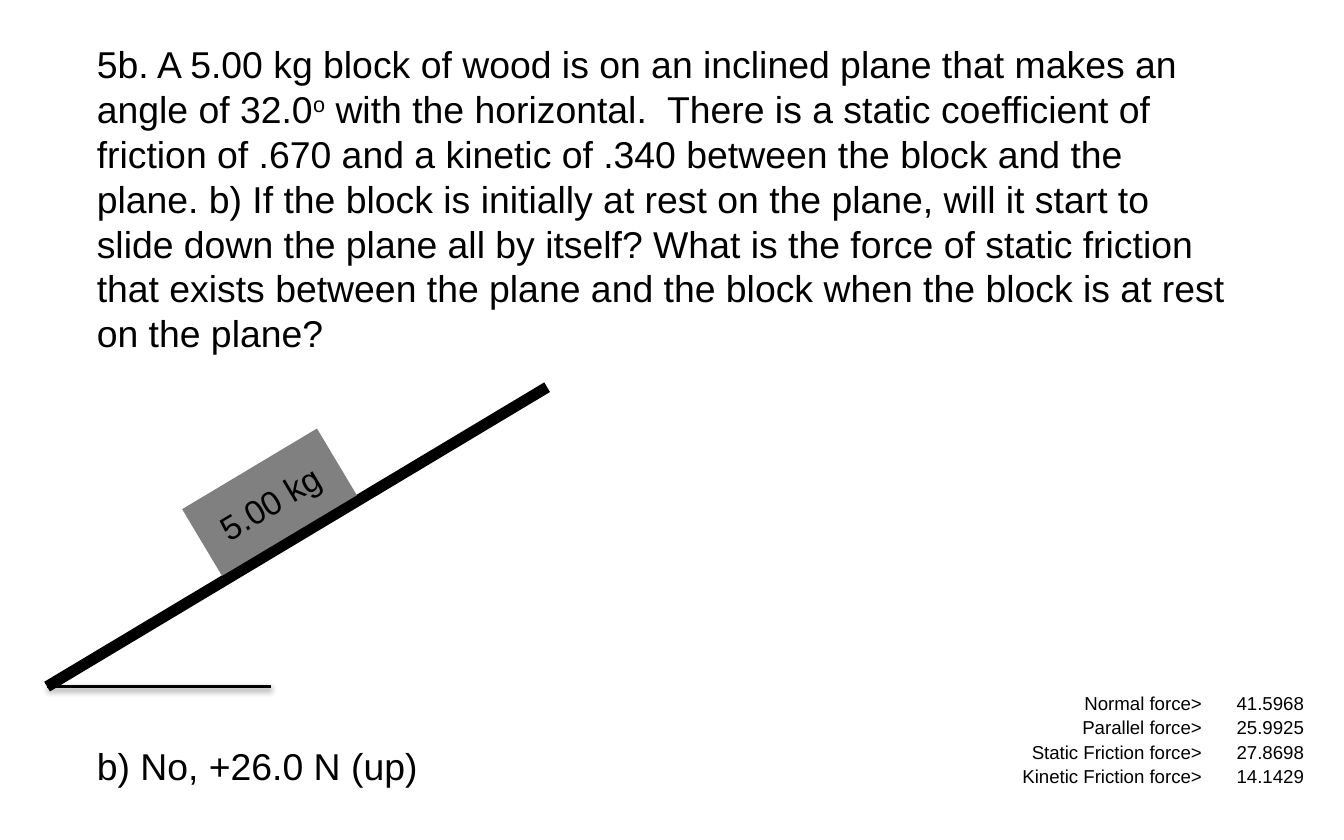
from dataclasses import dataclass

from lxml import etree
from pptx import Presentation
from pptx.dml.color import RGBColor
from pptx.enum.shapes import MSO_CONNECTOR, MSO_SHAPE
from pptx.enum.text import MSO_ANCHOR as Anchor, MSO_AUTO_SIZE as AutoSize, PP_ALIGN as Align
from pptx.oxml import parse_xml
from pptx.oxml.ns import nsdecls, qn
from pptx.util import Cm, Pt


@dataclass(frozen=True)
class Theme:
    font: str = "Arial"
    ink: RGBColor = RGBColor(0, 0, 0)
    block: RGBColor = RGBColor(0x80, 0x80, 0x80)
    body: int = 20
    label: int = 18
    small: int = 10


class SlideBuilder:
    def __init__(self, slide, theme):
        self.slide = slide
        self.theme = theme

    def style(self, paragraph, size, align=Align.LEFT):
        paragraph.alignment = align
        paragraph.font.name = self.theme.font
        paragraph.font.size = Pt(size)
        paragraph.font.color.rgb = self.theme.ink

    def text(self, left, top, width, height, parts, wrap=True):
        """Add a text box; parts are (text, is_superscript) pairs."""
        shape = self.slide.shapes.add_textbox(Cm(left), Cm(top), Cm(width), Cm(height))
        frame = shape.text_frame
        frame.word_wrap = wrap
        frame.auto_size = AutoSize.SHAPE_TO_FIT_TEXT
        paragraph = frame.paragraphs[0]
        for content, superscript in parts:
            run = paragraph.add_run()
            run.text = content
            if superscript:
                run._r.get_or_add_rPr().set("baseline", "30000")
        self.style(paragraph, self.theme.body)

    def table(self, left, top, widths, row_height, rows):
        frame = self.slide.shapes.add_table(
            len(rows), len(widths), Cm(left), Cm(top), Cm(sum(widths)), Cm(row_height * len(rows)))
        table = frame.table
        table.first_row = table.horz_banding = False
        for column, width in zip(table.columns, widths):
            column.width = Cm(width)
        for r, row in enumerate(rows):
            for c, content in enumerate(row):
                cell = table.cell(r, c)
                cell.fill.background()
                cell.margin_left = cell.margin_right = cell.margin_top = Cm(0.03)
                cell.margin_bottom = 0
                cell.vertical_anchor = Anchor.BOTTOM
                cell.text = content
                self.style(cell.text_frame.paragraphs[0], self.theme.small, Align.RIGHT)

    def line(self, shapes, start, end, width, shadow=False):
        connector = shapes.add_connector(
            MSO_CONNECTOR.STRAIGHT, *(Cm(value) for value in (*start, *end)))
        connector.line.color.rgb = self.theme.ink
        connector.line.width = Pt(width)
        effects = parse_xml(f"<a:effectLst {nsdecls('a')}/>")
        if shadow:
            outer = etree.SubElement(
                effects, qn("a:outerShdw"), blurRad=str(Pt(3.1)), dist=str(Pt(1.6)),
                dir="5400000", rotWithShape="0")
            color = etree.SubElement(outer, qn("a:srgbClr"), val=str(self.theme.ink))
            etree.SubElement(color, qn("a:alpha"), val="38000")
        connector._element.spPr.append(effects)

    def block(self, shapes, left, top, width, height, rotation, label):
        shape = shapes.add_shape(MSO_SHAPE.RECTANGLE, Cm(left), Cm(top), Cm(width), Cm(height))
        shape.rotation = rotation
        shape.shadow.inherit = False
        shape.fill.solid()
        shape.fill.fore_color.rgb = self.theme.block
        shape.line.fill.background()
        frame = shape.text_frame
        frame.word_wrap = False
        frame.vertical_anchor = Anchor.MIDDLE
        frame.text = label
        self.style(frame.paragraphs[0], self.theme.label, Align.CENTER)


def main():
    presentation = Presentation()
    presentation.slide_width, presentation.slide_height = Cm(25.4), Cm(15.88)
    slide = presentation.slides.add_slide(presentation.slide_layouts[6])
    builder = SlideBuilder(slide, Theme())

    # Question and answer
    builder.text(1.58, 0.66, 21.97, 6.25, [
        ("5b. A 5.00 kg block of wood is on an inclined plane that makes an angle of 32.0", False),
        ("o", True),
        (" with the horizontal.  There is a static coefficient of friction of .670 and a kinetic "
         "of .340 between the block and the plane. b) If the block is initially at rest on the "
         "plane, will it start to slide down the plane all by itself? What is the force of static "
         "friction that exists between the plane and the block when the block is at rest on the "
         "plane?", False),
    ])
    builder.text(1.58, 13.92, 6.63, 1.12, [("b) No, +26.0 N (up)", False)], wrap=False)

    # Computed forces
    builder.table(16.69, 13.06, (6.05, 1.93), 0.43, [
        ("Normal force>", "41.5968"),
        ("Parallel force>", "25.9925"),
        ("Static Friction force>", "27.8698"),
        ("Kinetic Friction force>", "14.1429"),
    ])

    # Inclined plane with the block, and the horizontal
    corner = (0.89, 12.98)
    incline = slide.shapes.add_group_shape().shapes
    builder.line(incline, corner, (10.34, 7.32), 6)
    builder.block(incline, 3.61, 8.76, 2.97, 1.47, 329.1, "5.00 kg")
    builder.line(slide.shapes, corner, (5.13, 12.98), 2, shadow=True)

    presentation.save("out.pptx")


if __name__ == "__main__":
    main()
